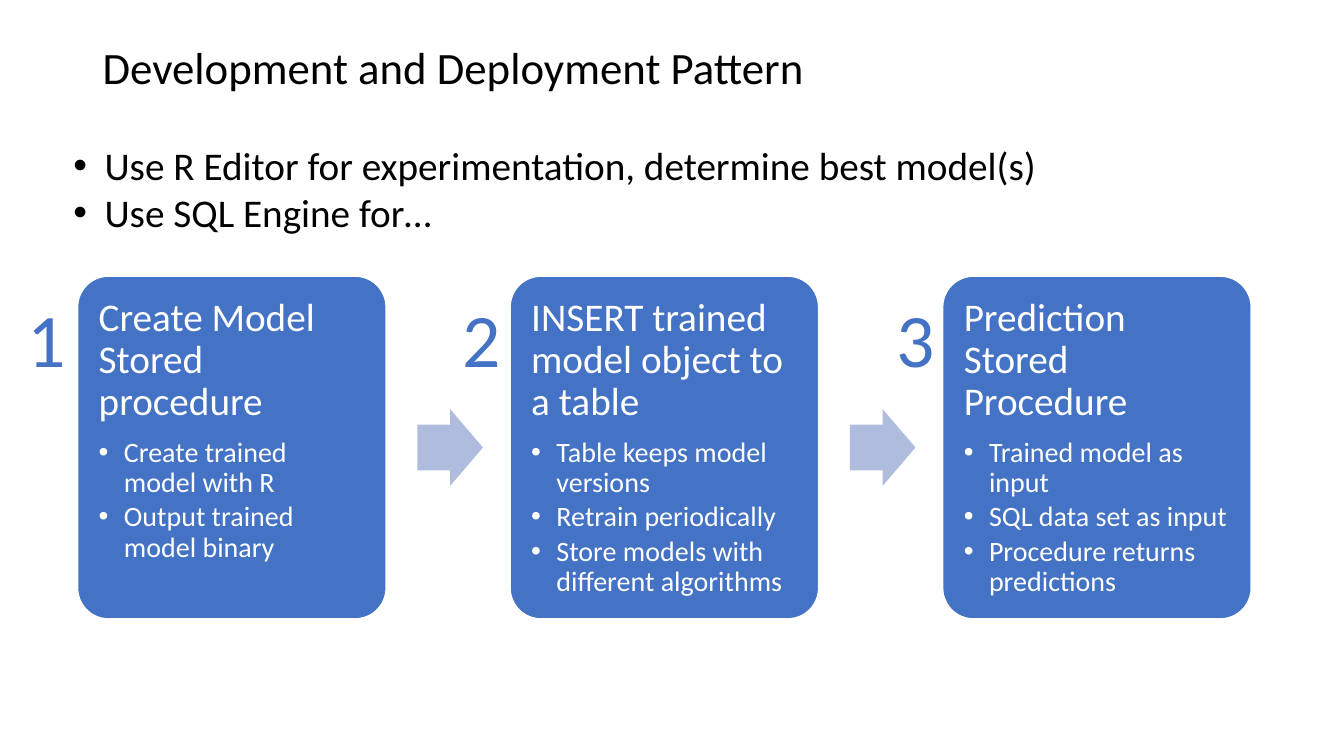
from dataclasses import dataclass

from lxml import etree
from pptx import Presentation
from pptx import util as u
from pptx.dml.color import RGBColor
from pptx.enum import shapes, text
from pptx.oxml import ns

FONT = "Calibri"
BLACK = RGBColor(0x00, 0x00, 0x00)
WHITE = RGBColor(0xFF, 0xFF, 0xFF)
BLUE = RGBColor(0x44, 0x72, 0xC4)
PALE_BLUE = RGBColor(0xB0, 0xBC, 0xDE)

CARD_LEFT, CARD_TOP, CARD_WIDTH, CARD_HEIGHT = 0.77, 2.74, 3.06, 3.4
CARD_PITCH = 4.29
NUMBER_LEFT, NUMBER_PITCH = 0.17, 4.31
ARROW_OFFSET, ARROW_WIDTH, ARROW_HEIGHT = 3.37, 0.65, 0.76


@dataclass
class Step:
    heading: str
    points: list[str]


STEPS = [
    Step("Create Model Stored procedure",
         ["Create trained model with R", "Output trained model binary"]),
    Step("INSERT trained model object to a table",
         ["Table keeps model versions", "Retrain periodically",
          "Store models with different algorithms"]),
    Step("Prediction Stored Procedure",
         ["Trained model as input", "SQL data set as input",
          "Procedure returns predictions"]),
]
INTRO = [
    "Use R Editor for experimentation, determine best model(s)",
    "Use SQL Engine for…",
]


def add_bullet(para, indent: float) -> None:
    properties = para._p.get_or_add_pPr()
    properties.set("marL", str(u.Inches(indent)))
    properties.set("indent", str(-u.Inches(indent)))
    font = etree.SubElement(properties, ns.qn("a:buFont"))
    font.set("typeface", "Arial")
    etree.SubElement(properties, ns.qn("a:buChar")).set("char", "•")


def write(frame, lines: list[str], size: float, color: RGBColor,
          indent: float = 0, line_spacing: float = 1, space_after: float = 0,
          align=text.PP_ALIGN.LEFT) -> None:
    """Append one paragraph per line, filling the empty first one."""
    for line in lines:
        first = frame.paragraphs[0]
        para = first if not first.runs else frame.add_paragraph()
        para.add_run().text = line
        if indent:
            add_bullet(para, indent)
        para.alignment = align
        para.line_spacing = line_spacing
        para.space_after = u.Pt(space_after)
        para.font.name = FONT
        para.font.size = u.Pt(size)
        para.font.color.rgb = color


def add_text_box(page, left: float, top: float, width: float, height: float,
                 wrap: bool = True):
    box = page.shapes.add_textbox(u.Inches(left), u.Inches(top),
                                  u.Inches(width), u.Inches(height))
    box.text_frame.word_wrap = wrap
    return box.text_frame


def add_solid(page, kind, left: float, top: float, width: float,
              height: float, fill: RGBColor, adjustments: list[float]):
    shape = page.shapes.add_shape(kind, u.Inches(left), u.Inches(top),
                                  u.Inches(width), u.Inches(height))
    shape.shadow.inherit = False
    shape.fill.solid()
    shape.fill.fore_color.rgb = fill
    shape.line.fill.background()
    for index, value in enumerate(adjustments):
        shape.adjustments[index] = value
    return shape


def add_card(page, left: float, step: Step) -> None:
    card = add_solid(page, shapes.MSO_SHAPE.ROUNDED_RECTANGLE, left, CARD_TOP,
                     CARD_WIDTH, CARD_HEIGHT, BLUE, [0.1])
    card.line.color.rgb = WHITE
    card.line.width = u.Pt(1)
    frame = card.text_frame
    frame.word_wrap = True
    frame.vertical_anchor = text.MSO_ANCHOR.TOP
    frame.margin_left = frame.margin_right = u.Inches(0.12)
    frame.margin_top = frame.margin_bottom = u.Inches(0.12)
    write(frame, [step.heading], 28, WHITE, line_spacing=0.9, space_after=9.8)
    write(frame, step.points, 20, WHITE, indent=0.25, line_spacing=0.9,
          space_after=3)


def add_arrow(page, left: float) -> None:
    top = CARD_TOP + (CARD_HEIGHT - ARROW_HEIGHT) / 2
    add_solid(page, shapes.MSO_SHAPE.RIGHT_ARROW, left, top, ARROW_WIDTH,
              ARROW_HEIGHT, PALE_BLUE, [0.6, 0.5])


def main() -> None:
    deck = Presentation()
    deck.slide_width, deck.slide_height = u.Inches(13.33), u.Inches(7.5)
    page = deck.slides.add_slide(deck.slide_layouts[6])

    # Title and introduction
    title = add_text_box(page, 0.92, 0.4, 11.5, 1.45)
    write(title, ["Development and Deployment Pattern"], 32, BLACK,
          line_spacing=0.9)
    intro = add_text_box(page, 0.63, 1.35, 11.66, 1.04)
    write(intro, INTRO, 28, BLACK, indent=0.31)

    # Numbered steps, joined by arrows
    for index, step in enumerate(STEPS):
        left = CARD_LEFT + index * CARD_PITCH
        add_card(page, left, step)
        if index < len(STEPS) - 1:
            add_arrow(page, left + ARROW_OFFSET)
        number = add_text_box(page, NUMBER_LEFT + index * NUMBER_PITCH, 2.85,
                              0.59, 1.01, wrap=False)
        write(number, [str(index + 1)], 54, BLUE, align=text.PP_ALIGN.CENTER)

    deck.save("out.pptx")


if __name__ == "__main__":
    main()
